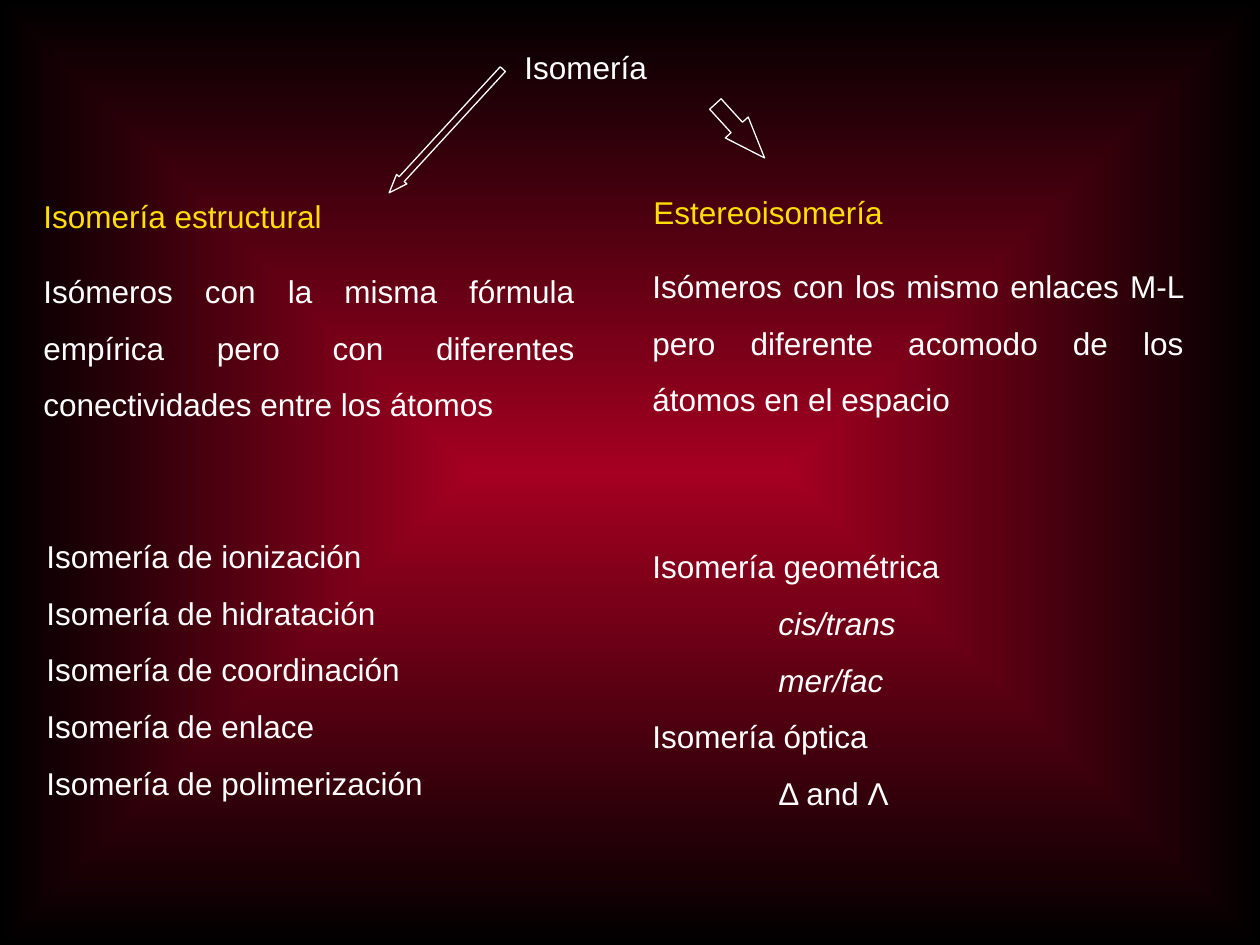
from dataclasses import dataclass

from lxml import etree
from pptx import Presentation
from pptx.dml.color import RGBColor
from pptx.enum.shapes import MSO_SHAPE
from pptx.enum.text import MSO_AUTO_SIZE, PP_ALIGN
from pptx.oxml.ns import qn
from pptx.util import Emu, Pt

PX_PER_INCH = 126
EMU_PER_PX = 914400 / PX_PER_INCH
FONT = "Arial"
WHITE = RGBColor(0xFF, 0xFF, 0xFF)
YELLOW = RGBColor(0xFF, 0xDE, 0x07)
CRIMSON = RGBColor(0xA5, 0x00, 0x21)
BLACK = RGBColor(0x00, 0x00, 0x00)
LEFT_ARROW = MSO_SHAPE.LEFT_ARROW
RIGHT_ARROW = MSO_SHAPE.RIGHT_ARROW
JUSTIFY = PP_ALIGN.JUSTIFY
LEFT = PP_ALIGN.LEFT
FIT_SHAPE = MSO_AUTO_SIZE.SHAPE_TO_FIT_TEXT


@dataclass(frozen=True)
class Line:
    text: str
    indented: bool = False
    italic: bool = False


@dataclass(frozen=True)
class TextBlock:
    left: int
    top: int
    width: int
    height: int
    lines: tuple[Line, ...]
    color: RGBColor = WHITE
    spacing: float = 1.5
    justified: bool = False


@dataclass(frozen=True)
class Arrow:
    preset: MSO_SHAPE
    center_x: int
    center_y: int
    length: int
    thickness: int
    rotation: float


TEXT_BLOCKS = (
    TextBlock(512, 42, 152, 50, (Line("Isomería"),), spacing=1),
    TextBlock(31, 191, 308, 50, (Line("Isomería estructural"),), YELLOW, 1),
    TextBlock(641, 187, 259, 50, (Line("Estereoisomería"),), YELLOW, 1),
    TextBlock(31, 247, 556, 183, (
        Line("Isómeros con la misma fórmula empírica pero con diferentes "
             "conectividades entre los átomos"),
    ), justified=True),
    TextBlock(640, 242, 556, 183, (
        Line("Isómeros con los mismo enlaces M-L pero diferente acomodo "
             "de los átomos en el espacio"),
    ), justified=True),
    TextBlock(34, 512, 406, 297, tuple(
        Line(f"Isomería de {kind}") for kind in
        ("ionización", "hidratación", "coordinación", "enlace", "polimerización")
    )),
    TextBlock(640, 522, 316, 297, (
        Line("Isomería geométrica"),
        Line("cis/trans", indented=True, italic=True),
        Line("mer/fac", indented=True, italic=True),
        Line("Isomería óptica"),
        Line("Δ and Λ", indented=True),
    )),
)

ARROWS = (
    Arrow(LEFT_ARROW, 446, 131, 168, 14, 312.6),
    Arrow(RIGHT_ARROW, 740, 131, 73, 31, 47.6),
)


def px(value: float) -> Emu:
    return Emu(round(value * EMU_PER_PX))


def paint_background(slide) -> None:
    """Fill with a rectangular gradient that darkens outwards from the centre."""
    fill = slide.background.fill
    fill.gradient()
    for stop, color, position in zip(fill.gradient_stops, (CRIMSON, BLACK), (0, 1)):
        stop.color.rgb = color
        stop.position = position
    gradient = slide.element.find(f".//{qn('a:gradFill')}")
    gradient.remove(gradient.find(qn("a:lin")))
    path = etree.SubElement(gradient, qn("a:path"), {"path": "rect"})
    edges = dict.fromkeys("ltrb", "50000")
    etree.SubElement(path, qn("a:fillToRect"), edges)


def add_text_block(slide, block: TextBlock) -> None:
    box = slide.shapes.add_textbox(
        px(block.left), px(block.top), px(block.width), px(block.height))
    frame = box.text_frame
    # Fixed widths keep each block's left edge in place.
    frame.word_wrap = True
    frame.auto_size = FIT_SHAPE
    frame.text = "\n".join(line.text for line in block.lines)
    for paragraph, line in zip(frame.paragraphs, block.lines):
        paragraph.alignment = JUSTIFY if block.justified else LEFT
        paragraph.line_spacing = block.spacing
        paragraph.font.name = FONT
        paragraph.font.size = Pt(18)
        paragraph.font.color.rgb = block.color
        paragraph.font.italic = line.italic
        if line.indented:
            properties = paragraph._p.get_or_add_pPr()
            properties.set("marL", str(px(PX_PER_INCH)))


def add_arrow(slide, arrow: Arrow) -> None:
    shape = slide.shapes.add_shape(
        arrow.preset,
        px(arrow.center_x - arrow.length / 2),
        px(arrow.center_y - arrow.thickness / 2),
        px(arrow.length), px(arrow.thickness))
    shape.rotation = arrow.rotation
    shape.adjustments[0] = 0.5
    shape.adjustments[1] = 1.33
    shape.shadow.inherit = False
    shape.fill.background()
    shape.line.color.rgb = WHITE
    shape.line.width = Pt(0.75)


def main() -> None:
    presentation = Presentation()
    presentation.slide_width = px(1260)
    presentation.slide_height = px(945)
    slide = presentation.slides.add_slide(presentation.slide_layouts[6])
    paint_background(slide)
    for block in TEXT_BLOCKS:
        add_text_block(slide, block)
    for arrow in ARROWS:
        add_arrow(slide, arrow)
    presentation.save("out.pptx")


if __name__ == "__main__":
    main()
